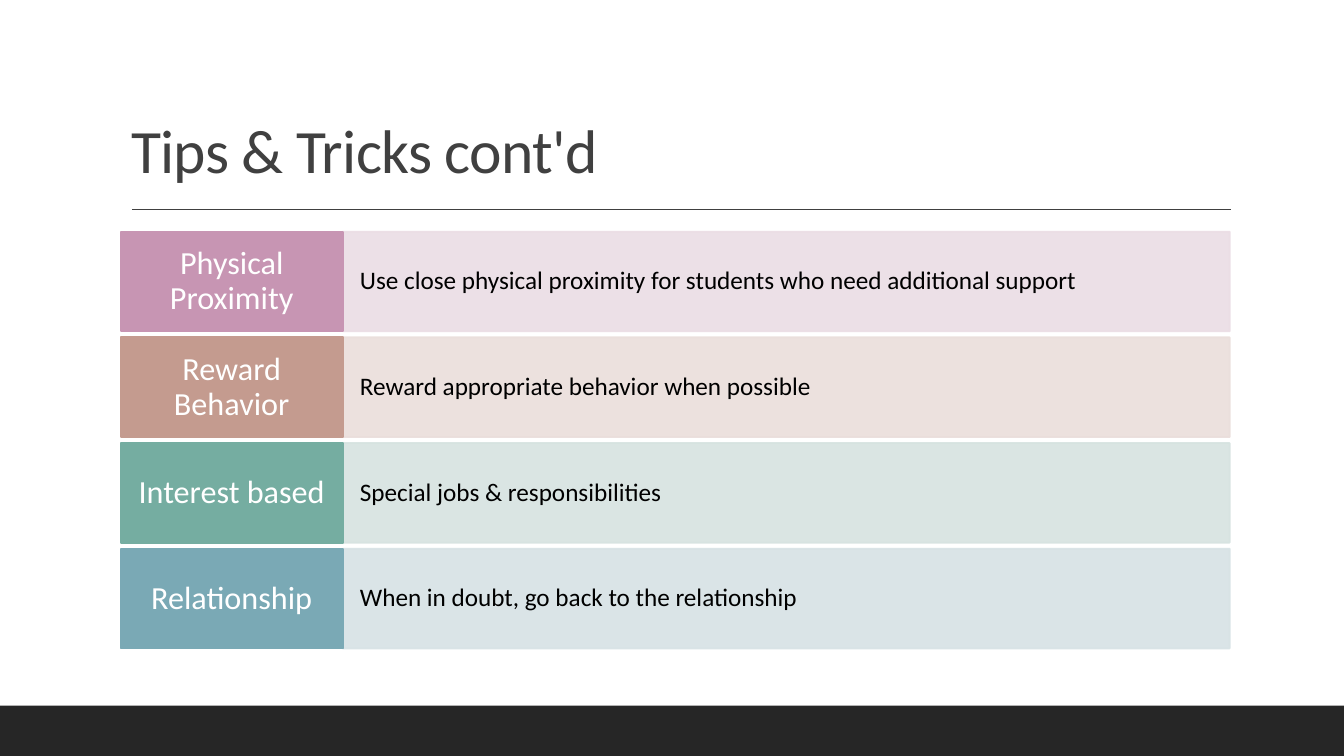
"""Build the "Tips & Tricks cont'd" slide with four labelled rows."""
from dataclasses import dataclass

import lxml.etree
import pptx
import pptx.dml.color
import pptx.enum.shapes
import pptx.enum.text
import pptx.oxml.ns
import pptx.util

Pt = pptx.util.Pt
Align = pptx.enum.text.PP_ALIGN
Anchor = pptx.enum.text.MSO_ANCHOR


@dataclass(frozen=True)
class Theme:
    font: str = "Calibri"
    title_size: float = 44
    label_size: float = 23
    tip_size: float = 18
    title_color: str = "404040"
    label_color: str = "FFFFFF"
    tip_color: str = "000000"
    footer_color: str = "262626"
    row_colors: tuple = (
        ("C795B3", "EBDDE5"),
        ("C49B8F", "EADEDB"),
        ("75ADA1", "D6E3E0"),
        ("7AA9B5", "D7E2E5"),
    )


def rgb(color):
    return pptx.dml.color.RGBColor.from_string(color)


class SlideBuilder:
    def __init__(self, slide, theme):
        self.slide = slide
        self.theme = theme

    def set_text(self, shape, text, size, color, align, anchor, margins):
        frame = shape.text_frame
        frame.text = text
        frame.word_wrap = True
        frame.auto_size = pptx.enum.text.MSO_AUTO_SIZE.NONE
        frame.vertical_anchor = anchor
        frame.margin_left = frame.margin_right = Pt(margins[0])
        frame.margin_top = frame.margin_bottom = Pt(margins[1])
        paragraph = frame.paragraphs[0]
        paragraph.alignment = align
        paragraph.line_spacing = 0.9
        paragraph.space_before = Pt(0)
        paragraph.font.name = self.theme.font
        paragraph.font.size = Pt(size)
        paragraph.font.color.rgb = rgb(color)
        return paragraph

    def title(self, text, left, top, width, height):
        shape = self.slide.shapes.title
        shape.left, shape.top = Pt(left), Pt(top)
        shape.width, shape.height = Pt(width), Pt(height)
        paragraph = self.set_text(shape, text, self.theme.title_size, self.theme.title_color,
                                  Align.LEFT, Anchor.BOTTOM, (7.2, 3.6))
        paragraph.runs[0]._r.get_or_add_rPr().set("spc", "-50")

    def rule(self, left, right, y):
        connector = self.slide.shapes.add_connector(
            pptx.enum.shapes.MSO_CONNECTOR.STRAIGHT, Pt(left), Pt(y), Pt(right), Pt(y))
        connector.line.color.rgb = rgb(self.theme.title_color)
        connector.line.width = Pt(1)
        lxml.etree.SubElement(connector._element.spPr, pptx.oxml.ns.qn("a:effectLst"))

    def box(self, left, top, width, height, color, outlined=True, opacity=100):
        shape = self.slide.shapes.add_shape(
            pptx.enum.shapes.MSO_SHAPE.RECTANGLE, Pt(left), Pt(top), Pt(width), Pt(height))
        shape.shadow.inherit = False
        shape.fill.solid()
        shape.fill.fore_color.rgb = rgb(color)
        if outlined:
            shape.line.color.rgb = rgb(color)
            shape.line.width = Pt(1.25)
        else:
            shape.line.fill.background()
        if opacity < 100:
            for element in list(shape._element.spPr.iter(pptx.oxml.ns.qn("a:srgbClr"))):
                alpha = lxml.etree.SubElement(element, pptx.oxml.ns.qn("a:alpha"))
                alpha.set("val", str(opacity * 1000))
        return shape

    def row(self, label, tip, colors, left, top, height):
        label_width, tip_width = 158.4, 633.6
        label_color, tip_color = colors
        tip_box = self.box(left + label_width, top, tip_width, height, tip_color, opacity=90)
        self.set_text(tip_box, tip, self.theme.tip_size, self.theme.tip_color,
                      Align.LEFT, Anchor.MIDDLE, (12.3, 18))
        label_box = self.box(left, top, label_width, height, label_color)
        self.set_text(label_box, label, self.theme.label_size, self.theme.label_color,
                      Align.CENTER, Anchor.MIDDLE, (8.7, 7.2))


def main():
    presentation = pptx.Presentation()
    presentation.slide_width, presentation.slide_height = Pt(960), Pt(540)
    slide = presentation.slides.add_slide(presentation.slide_layouts[5])
    theme = Theme()
    builder = SlideBuilder(slide, theme)

    builder.title("Tips & Tricks cont'd", 86.4, 22.6, 792, 114.2)
    builder.rule(94.3, 879, 149.5)
    builder.box(0, 504, 960, 36, theme.footer_color, outlined=False)

    tips = (
        ("Physical Proximity",
         "Use close physical proximity for students who need additional support"),
        ("Reward Behavior", "Reward appropriate behavior when possible"),
        ("Interest based", "Special jobs & responsibilities"),
        ("Relationship", "When in doubt, go back to the relationship"),
    )
    for index, ((label, tip), colors) in enumerate(zip(tips, theme.row_colors)):
        builder.row(label, tip, colors, 86.4, 165.5 + index * 75.5, 71.2)

    presentation.save("out.pptx")


if __name__ == "__main__":
    main()
